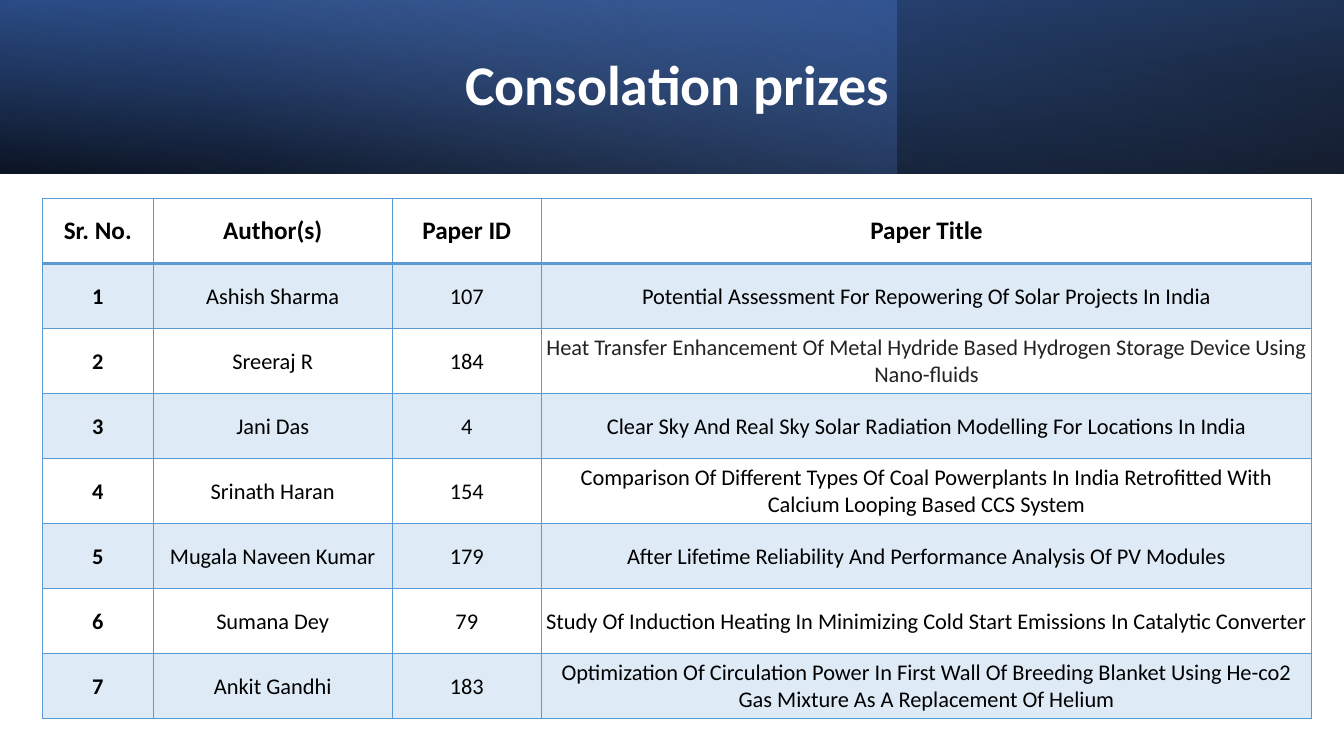
"""Builds the slide that lists the consolation prizes."""
from lxml import etree
from pptx import Presentation
from pptx.dml.color import RGBColor
from pptx.enum.shapes import MSO_SHAPE
from pptx.enum.text import MSO_ANCHOR, PP_ALIGN
from pptx.oxml import parse_xml
from pptx.oxml.ns import nsdecls, qn
from pptx.util import Inches, Pt

RECT = MSO_SHAPE.RECTANGLE
MIDDLE = MSO_ANCHOR.MIDDLE
CENTER = PP_ALIGN.CENTER

COLORS = {"black": "000000", "white": "FFFFFF", "navy": "2F5597",
          "blue": "4472C4", "pale": "8FAADC", "sky": "5B9BD5", "ink": "232323"}

HEADS = ["Sr. No.", "Author(s)", "Paper ID", "Paper Title"]
PRIZES = [
    ("Ashish Sharma", "107", "Potential Assessment For Repowering Of Solar Projects In India"),
    ("Sreeraj R", "184", "Heat Transfer Enhancement Of Metal Hydride Based Hydrogen "
     "Storage Device Using Nano-fluids"),
    ("Jani Das", "4", "Clear Sky And Real Sky Solar Radiation Modelling For Locations In India"),
    ("Srinath Haran", "154", "Comparison Of Different Types Of Coal Powerplants In India "
     "Retrofitted With Calcium Looping Based CCS System"),
    ("Mugala Naveen Kumar", "179", "After Lifetime Reliability And Performance Analysis "
     "Of PV Modules"),
    ("Sumana Dey", "79", "Study Of Induction Heating In Minimizing Cold Start Emissions "
     "In Catalytic Converter"),
    ("Ankit Gandhi", "183", "Optimization Of Circulation Power In First Wall Of Breeding "
     "Blanket Using He-co2 Gas Mixture As A Replacement Of Helium"),
]
WIDTHS = [1.1, 2.37, 1.48, 7.64]
HEIGHT = 5.16 / (len(PRIZES) + 1)


class Deck:
    """Holds the style and the current slide."""

    def __init__(self, slide, font="Calibri"):
        self.slide = slide
        self.font = font

    def band(self, width, stops, angle, flip=False, turn=0):
        shape = self.slide.shapes.add_shape(RECT, 0, 0, Inches(width), Inches(1.72))
        shape.shadow.inherit = False
        shape.line.fill.background()
        shape.rotation = turn
        props = shape._element.spPr
        if flip:
            props.find(qn("a:xfrm")).set("flipH", "1")
        marks = "".join(
            f'<a:gs pos="{pos * 1000}"><a:srgbClr val="{COLORS[color]}">'
            f'<a:alpha val="{alpha * 1000}"/></a:srgbClr></a:gs>'
            for pos, color, alpha in stops)
        props.find(qn("a:prstGeom")).addnext(parse_xml(
            f'<a:gradFill {nsdecls("a")} rotWithShape="1"><a:gsLst>{marks}</a:gsLst>'
            f'<a:lin ang="{angle * 60000}" scaled="0"/></a:gradFill>'))

    def label(self, frame, text, size, color="black", bold=False):
        frame.word_wrap = True
        para = frame.paragraphs[0]
        para.alignment = CENTER
        run = para.add_run()
        run.text = text
        style = {"name": self.font, "size": Pt(size), "bold": bold}
        for key, value in style.items():
            setattr(run.font, key, value)
        run.font.color.rgb = RGBColor.from_string(COLORS[color])
        return para

    def title(self, text):
        box = self.slide.shapes.add_textbox(
            Inches(0.42), Inches(0.23), Inches(12.59), Inches(1.27))
        box.text_frame.vertical_anchor = MIDDLE
        self.label(box.text_frame, text, 40, "white", True).line_spacing = 0.9

    def edge(self, cell, row):
        props = cell._tc.get_or_add_tcPr()
        sizes = {"L": 1, "R": 1, "T": 2 if row == 1 else 1, "B": 2 if row == 0 else 1}
        for index, (side, size) in enumerate(sizes.items()):
            props.insert(index, parse_xml(
                f'<a:ln{side} {nsdecls("a")} w="{int(Pt(size))}"><a:solidFill>'
                f'<a:srgbClr val="{COLORS["sky"]}"/></a:solidFill></a:ln{side}>'))

    def shade(self, cell, row):
        if row % 2 == 0:
            cell.fill.background()
            return
        cell.fill.solid()
        cell.fill.fore_color.rgb = RGBColor.from_string(COLORS["sky"])
        tint = cell._tc.tcPr.find(".//" + qn("a:srgbClr"))
        etree.SubElement(tint, qn("a:alpha")).set("val", "20000")

    def table(self, rows):
        grid = self.slide.shapes.add_table(
            len(rows), len(WIDTHS), Inches(0.42), Inches(1.97),
            Inches(sum(WIDTHS)), Inches(HEIGHT * len(rows))).table
        for flag in ("first_row", "horz_banding"):
            setattr(grid, flag, False)
        for column, width in zip(grid.columns, WIDTHS):
            column.width = Inches(width)
        pads = {"margin_left": 0.01, "margin_right": 0.01, "margin_top": 0.01,
                "margin_bottom": 0}
        for row, texts in enumerate(rows):
            grid.rows[row].height = Inches(HEIGHT)
            for col, text in enumerate(texts):
                cell = grid.cell(row, col)
                cell.vertical_anchor = MIDDLE
                if row:
                    for side, gap in pads.items():
                        setattr(cell, side, Inches(gap))
                color = "ink" if (row, col) == (2, 3) else "black"
                self.label(cell.text_frame, text, 16 if row else 18, color,
                           row == 0 or col == 0)
                self.shade(cell, row)
                self.edge(cell, row)


def main():
    show = Presentation()
    show.slide_width, show.slide_height = Inches(13.33), Inches(7.5)
    deck = Deck(show.slides.add_slide(show.slide_layouts[6]))
    deck.band(13.33, [(0, "black", 96), (100, "navy", 100)], 100, flip=True, turn=180)
    deck.band(8.89, [(0, "blue", 41), (74, "pale", 0)], 140)
    deck.band(13.33, [(0, "black", 63), (78, "blue", 15)], 260, flip=True)
    deck.title("Consolation prizes")
    deck.table([HEADS] + [(str(rank), *prize) for rank, prize in enumerate(PRIZES, 1)])
    show.save("out.pptx")


if __name__ == "__main__":
    main()
